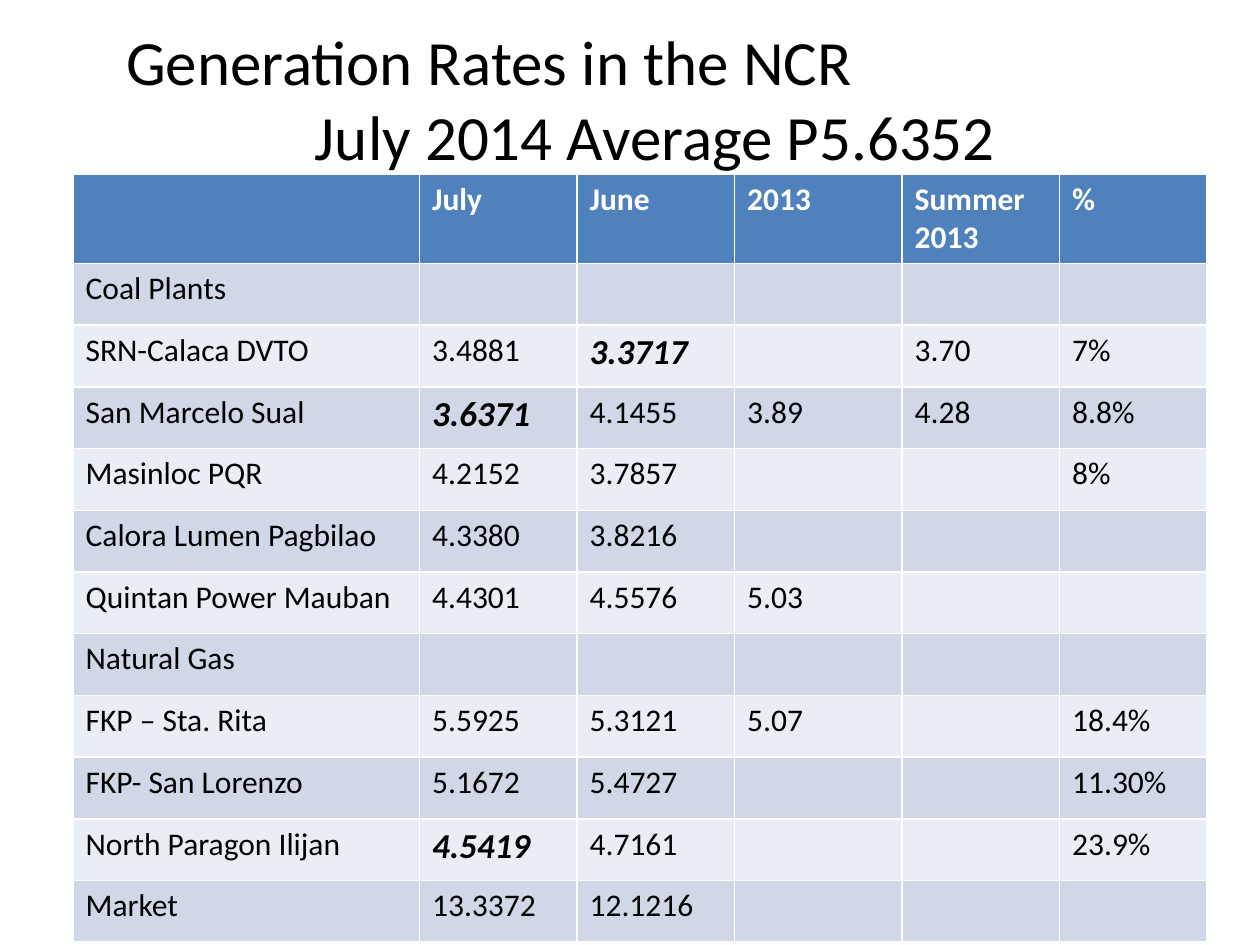
"""Build a slide with a table of power generation rates in the NCR."""
from pptx import Presentation
from pptx.dml.color import RGBColor
from pptx.enum.text import MSO_ANCHOR, MSO_AUTO_SIZE, PP_ALIGN
from pptx.util import Inches, Pt

LEFT, CENTER = PP_ALIGN.LEFT, PP_ALIGN.CENTER
MIDDLE = MSO_ANCHOR.MIDDLE
NO_FIT = MSO_AUTO_SIZE.NONE

HEADER_FILL = "4F81BD"
BAND_FILLS = ["E9EDF4", "D0D8E8"]
COL_WIDTHS = [2.75, 1.25, 1.25, 1.33, 1.25, 1.17]
ROW_HEIGHT = 0.49
ROWS = [
    ["", "July", "June", "2013", "Summer 2013", "%"],
    ["Coal Plants", "", "", "", "", ""],
    ["SRN-Calaca DVTO", "3.4881", "3.3717", "", "3.70", "7%"],
    ["San Marcelo Sual", "3.6371", "4.1455", "3.89", "4.28", "8.8%"],
    ["Masinloc PQR", "4.2152", "3.7857", "", "", "8%"],
    ["Calora Lumen Pagbilao", "4.3380", "3.8216", "", "", ""],
    ["Quintan Power Mauban", "4.4301", "4.5576", "5.03", "", ""],
    ["Natural Gas", "", "", "", "", ""],
    ["FKP – Sta. Rita", "5.5925", "5.3121", "5.07", "", "18.4%"],
    ["FKP- San Lorenzo", "5.1672", "5.4727", "", "", "11.30%"],
    ["North Paragon Ilijan", "4.5419", "4.7161", "", "", "23.9%"],
    ["Market", "13.3372", "12.1216", "", "", ""],
]
HIGHLIGHTS = {"3.3717", "3.6371", "4.5419"}


def rgb(color):
    return RGBColor.from_string(color)


def set_font(p, size, color, bold=False, italic=False):
    p.font.name = "Calibri"
    p.font.size = Pt(size)
    p.font.color.rgb = rgb(color)
    p.font.bold = bold
    p.font.italic = italic


prs = Presentation()
prs.slide_width = Inches(10)
prs.slide_height = Inches(7.5)
s = prs.slides.add_slide(prs.slide_layouts[5])

title = s.shapes.title
title.left, title.top = Inches(0.5), Inches(0.3)
title.width, title.height = Inches(9), Inches(0.95)
tf = title.text_frame
tf.text = "Generation Rates in the NCR\nJuly 2014 Average P5.6352"
tf.auto_size = NO_FIT
tf.vertical_anchor = MIDDLE
for p, align in zip(tf.paragraphs, [LEFT, CENTER]):
    p.alignment = align
    set_font(p, 36, "000000")
tf.paragraphs[0]._p.get_or_add_pPr().set("marL", str(Inches(0.4)))

table = s.shapes.add_table(
    len(ROWS), len(COL_WIDTHS), Inches(0.58), Inches(1.38),
    Inches(sum(COL_WIDTHS)), Inches(ROW_HEIGHT * len(ROWS))).table
for col, width in zip(table.columns, COL_WIDTHS):
    col.width = Inches(width)

for i, values in enumerate(ROWS):
    table.rows[i].height = Inches(ROW_HEIGHT)
    header = i == 0
    for j, value in enumerate(values):
        cell = table.cell(i, j)
        cell.fill.solid()
        cell.fill.fore_color.rgb = rgb(HEADER_FILL if header else BAND_FILLS[i % 2])
        cell.text = value
        strong = value in HIGHLIGHTS
        set_font(cell.text_frame.paragraphs[0], 20 if strong else 18,
                 "FFFFFF" if header else "000000", header or strong, strong)

prs.save("out.pptx")
